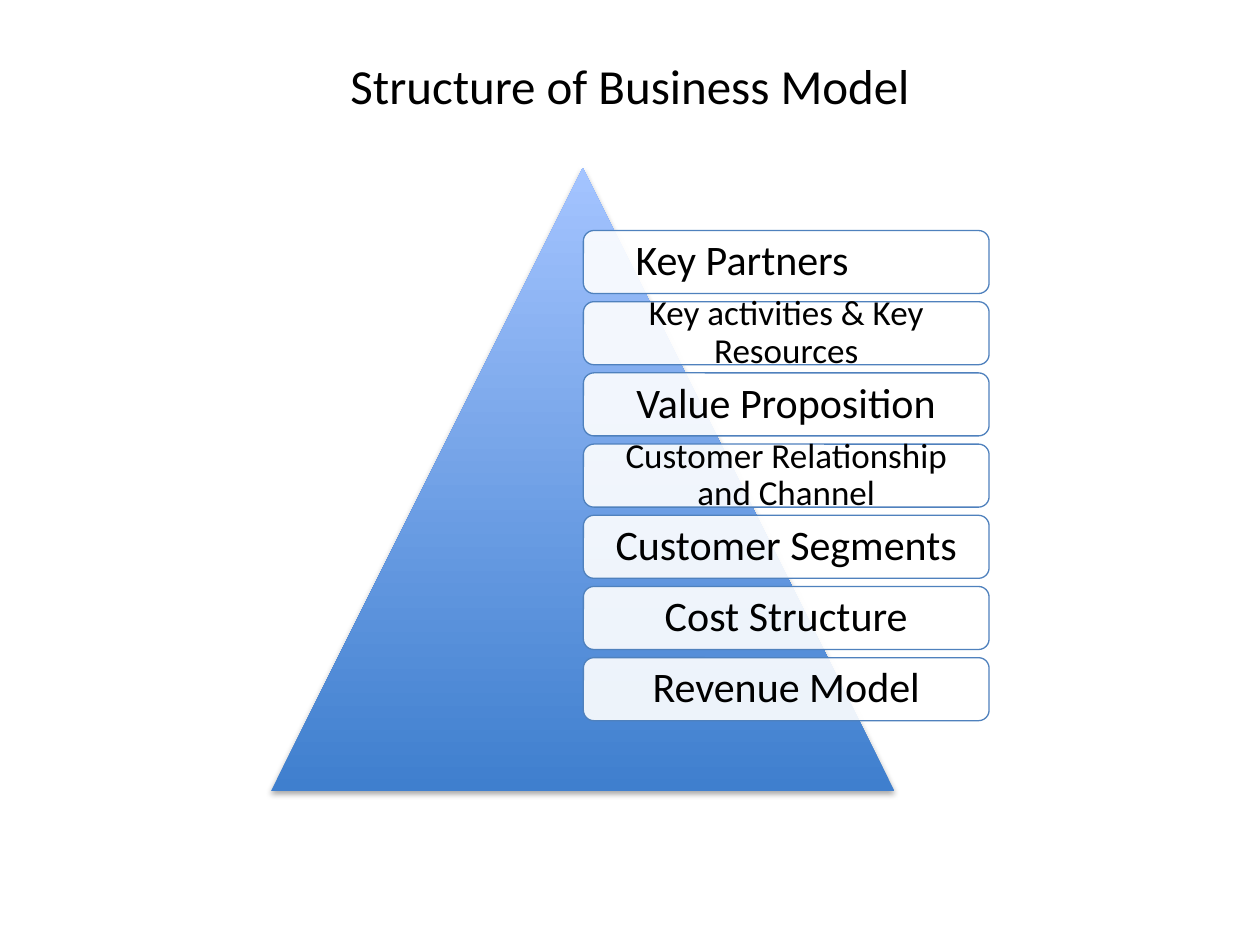
from pptx import Presentation
from pptx.dml.color import RGBColor
from pptx.enum.shapes import MSO_SHAPE as Shape
from pptx.enum.text import MSO_ANCHOR as Anchor, PP_ALIGN as Align
from pptx.oxml import parse_xml
from pptx.oxml.ns import nsdecls, qn
from pptx.util import Inches, Pt

BLACK = RGBColor(0x00, 0x00, 0x00)
WHITE = RGBColor(0xFF, 0xFF, 0xFF)
BORDER_BLUE = RGBColor(0x4F, 0x81, 0xBD)
DEEP_BLUE = RGBColor(0x3F, 0x7F, 0xCE)
PALE_BLUE = RGBColor(0xA4, 0xC4, 0xFF)

# Label, text size, side margin, alignment
LAYERS = [
    ("Key Partners", 24, 0.39, Align.LEFT),
    ("Key activities & Key Resources", 20, 0.08, Align.CENTER),
    ("Value Proposition", 24, 0.1, Align.CENTER),
    ("Customer Relationship and Channel", 20, 0.08, Align.CENTER),
    ("Customer Segments", 24, 0.1, Align.CENTER),
    ("Cost Structure", 24, 0.1, Align.CENTER),
    ("Revenue Model", 24, 0.1, Align.CENTER),
]
LAYER_TOP, LAYER_HEIGHT = 1.83, 0.5
LAYER_STEP = (5.22 - LAYER_TOP) / (len(LAYERS) - 1)


class PyramidSlide:
    font_name = "Calibri"

    def __init__(self, presentation):
        self.slide = presentation.slides.add_slide(presentation.slide_layouts[5])

    def label(self, shape, text, size, align):
        frame = shape.text_frame
        frame.text = text
        frame.word_wrap = True
        frame.vertical_anchor = Anchor.MIDDLE
        paragraph = frame.paragraphs[0]
        paragraph.alignment = align
        font = paragraph.runs[0].font
        font.name, font.size = self.font_name, Pt(size)
        font.color.rgb = BLACK
        return paragraph

    def title(self, text, left, top, width, height):
        title = self.slide.shapes.title
        title.left, title.top = Inches(left), Inches(top)
        title.width, title.height = Inches(width), Inches(height)
        self.label(title, text, 28, Align.CENTER)

    def shape(self, kind, left, top, width, height):
        shape = self.slide.shapes.add_shape(
            kind, Inches(left), Inches(top), Inches(width), Inches(height))
        shape.shadow.inherit = False
        return shape

    def pyramid(self, left, top, width, height):
        triangle = self.shape(Shape.ISOSCELES_TRIANGLE, left, top, width, height)
        triangle.line.fill.background()
        triangle.fill.gradient()
        triangle.fill.gradient_angle = 90
        for stop, color, position in zip(
                triangle.fill.gradient_stops, (DEEP_BLUE, PALE_BLUE), (0, 1)):
            stop.color.rgb = color
            stop.position = position
        # Soft shadow below the base
        effects = triangle._element.spPr.find(qn("a:effectLst"))
        effects.append(parse_xml(
            f'<a:outerShdw {nsdecls("a")} blurRad="{Pt(3.1)}" dist="{Pt(1.8)}" '
            'dir="5400000" rotWithShape="0"><a:srgbClr val="000000">'
            '<a:alpha val="35000"/></a:srgbClr></a:outerShdw>'))

    def layer(self, text, size, margin, align, top):
        box = self.shape(Shape.ROUNDED_RECTANGLE, 4.63, top, 3.22, LAYER_HEIGHT)
        box.fill.solid()
        box.fill.fore_color.rgb = WHITE
        color = box._element.spPr.find(qn("a:solidFill")).find(qn("a:srgbClr"))
        color.append(parse_xml(f'<a:alpha {nsdecls("a")} val="90000"/>'))
        box.line.color.rgb = BORDER_BLUE
        box.line.width = Pt(0.75)
        paragraph = self.label(box, text, size, align)
        paragraph.line_spacing = 0.9
        frame = box.text_frame
        frame.margin_left = frame.margin_right = Inches(margin)
        frame.margin_top = frame.margin_bottom = Inches(0.08)


def main():
    presentation = Presentation()
    presentation.slide_width, presentation.slide_height = Inches(10), Inches(7.5)
    page = PyramidSlide(presentation)

    # Title and pyramid
    page.title("Structure of Business Model", 0.5, 0.3, 9, 0.74)
    page.pyramid(2.15, 1.33, 4.95, 4.95)

    # Stacked layers
    for index, layer in enumerate(LAYERS):
        page.layer(*layer, top=LAYER_TOP + index * LAYER_STEP)

    presentation.save("out.pptx")


if __name__ == "__main__":
    main()
